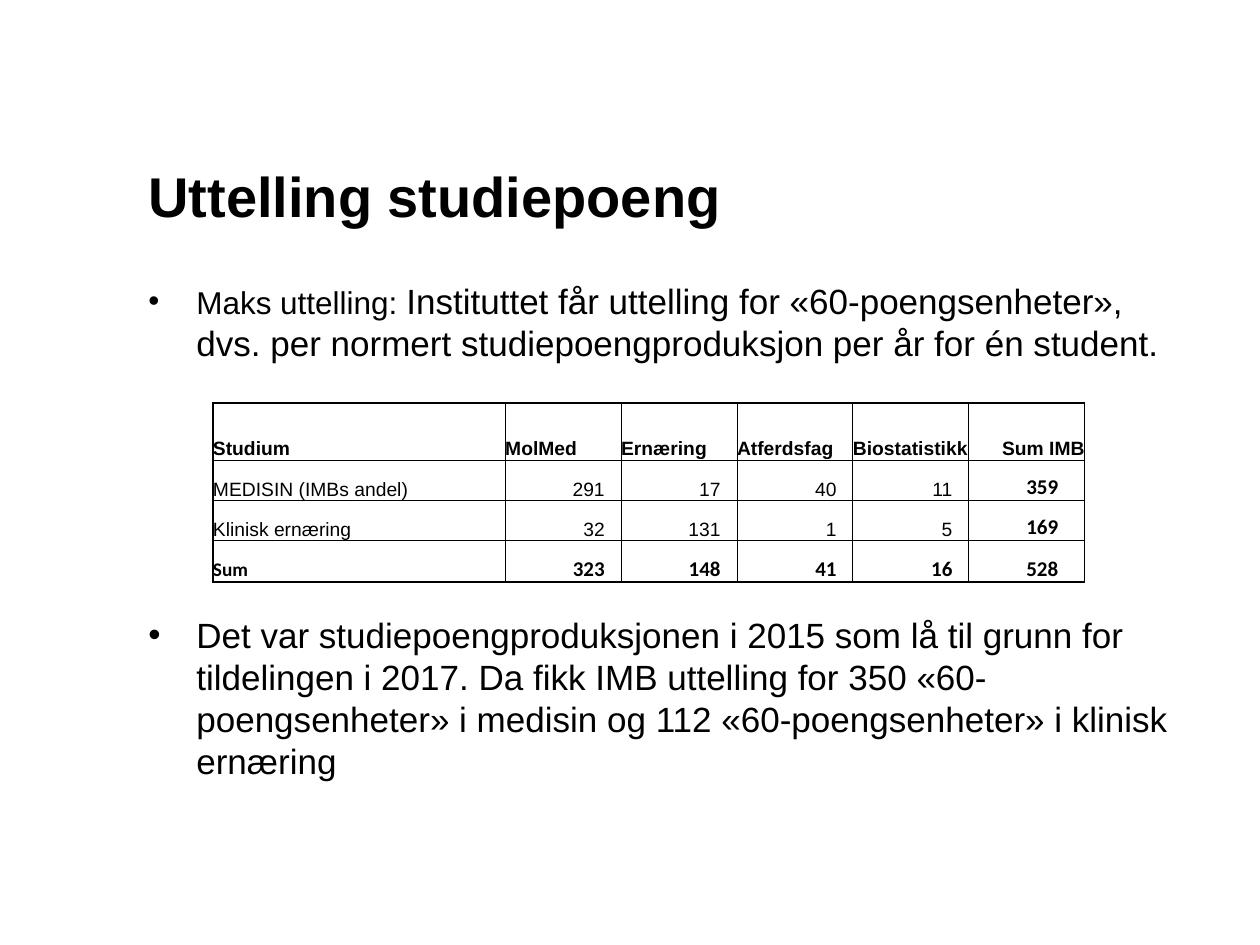
from dataclasses import dataclass

from lxml import etree
from pptx import Presentation
from pptx import util as u
from pptx.dml.color import RGBColor
from pptx.enum import text
from pptx.oxml.ns import qn


@dataclass(frozen=True)
class Theme:
    ink: RGBColor = RGBColor(0, 0, 0)
    font: str = "Arial"
    total_font: str = "Calibri"
    title: int = 32
    body: int = 20
    lead: int = 18
    table: int = 11
    total: int = 12
    thin: float = 0.5
    thick: float = 1


@dataclass(frozen=True)
class Bullet:
    spans: tuple[tuple[str, int], ...]
    space_before: float


THEME = Theme()
BULLETS = (
    Bullet((("Maks uttelling: ", THEME.lead),
            ("Instituttet får uttelling for «60-poengsenheter», dvs. per normert "
             "studiepoengproduksjon per år for én student.", THEME.body)), 0),
    Bullet((("Det var studiepoengproduksjonen i 2015 som lå til grunn for tildelingen i 2017. "
             "Da fikk IMB uttelling for 350 «60-poengsenheter» i medisin og 112 "
             "«60-poengsenheter» i klinisk ernæring", THEME.body),), 143),
)
ROWS = (
    ("Studium", "MolMed", "Ernæring", "Atferdsfag", "Biostatistikk", "Sum IMB"),
    ("MEDISIN (IMBs andel)", "291", "17", "40", "11", "359"),
    ("Klinisk ernæring", "32", "131", "1", "5", "169"),
    ("Sum", "323", "148", "41", "16", "528"),
)
COLUMN_WIDTHS = (2.32,) + (0.92,) * 5
ROW_HEIGHTS = (0.45, 0.32, 0.32, 0.33)
NUMBER_INSET, TOTAL_INSET = 0.13, 0.21


def style(span, size: float, bold: bool = False, font: str = THEME.font) -> None:
    span.font.name, span.font.size, span.font.bold = font, u.Pt(size), bold
    span.font.color.rgb = THEME.ink


def add_box(page, left: float, top: float, width: float, height: float):
    frame = page.shapes.add_textbox(*map(u.Inches, (left, top, width, height))).text_frame
    frame.word_wrap = True
    return frame


def add_title(page, words: str) -> None:
    frame = add_box(page, 1.08, 0.92, 8.42, 1.25)
    frame.vertical_anchor = text.MSO_ANCHOR.MIDDLE
    frame.text = words
    style(frame.paragraphs[0].runs[0], THEME.title, True)


def add_bullets(page, bullets: tuple[Bullet, ...]) -> None:
    frame = add_box(page, 1.08, 2.17, 8.42, 4.5)
    for index, bullet in enumerate(bullets):
        para = frame.add_paragraph() if index else frame.paragraphs[0]
        properties = para._p.get_or_add_pPr()
        properties.set("marL", str(u.Inches(0.38)))
        properties.set("indent", str(u.Inches(-0.38)))
        etree.SubElement(properties, qn("a:buFont"), typeface=THEME.font)
        etree.SubElement(properties, qn("a:buChar"), char="•")
        para.space_before = u.Pt(bullet.space_before)
        for words, size in bullet.spans:
            span = para.add_run()
            span.text = words
            style(span, size)


def set_borders(cell, widths: dict[str, float]) -> None:
    properties = cell._tc.get_or_add_tcPr()
    for index, (side, width) in enumerate(widths.items()):
        line = etree.Element(qn(f"a:ln{side}"), w=str(u.Pt(width)))
        fill = etree.SubElement(line, qn("a:solidFill"))
        etree.SubElement(fill, qn("a:srgbClr"), val=str(THEME.ink))
        properties.insert(index, line)


def fill_cell(cell, words: str, row: int, column: int) -> None:
    last_row, last_column = len(ROWS) - 1, len(COLUMN_WIDTHS) - 1
    is_number = row > 0 and column > 0
    is_total = row == last_row or (row > 0 and column == last_column)
    cell.fill.background()
    cell.vertical_anchor = text.MSO_ANCHOR.BOTTOM
    cell.margin_left = cell.margin_right = cell.margin_top = cell.margin_bottom = 0
    cell.text = words
    para = cell.text_frame.paragraphs[0]
    if is_number or column == last_column:
        para.alignment = text.PP_ALIGN.RIGHT
    if is_number:
        cell.margin_right = u.Inches(TOTAL_INSET if column == last_column else NUMBER_INSET)
    style(para.runs[0], THEME.total if is_total and is_number else THEME.table,
          row == 0 or is_total, THEME.total_font if is_total else THEME.font)
    outer = {"L": column == 0, "R": column == last_column, "T": row == 0, "B": row == last_row}
    set_borders(cell, {side: THEME.thick if edge else THEME.thin for side, edge in outer.items()})


def add_credit_table(page) -> None:
    table = page.shapes.add_table(
        len(ROWS), len(COLUMN_WIDTHS), u.Inches(1.69), u.Inches(3.2),
        u.Inches(sum(COLUMN_WIDTHS)), u.Inches(sum(ROW_HEIGHTS))).table
    table.first_row = table.horz_banding = False
    for column, width in zip(table.columns, COLUMN_WIDTHS):
        column.width = u.Inches(width)
    for row, height in zip(table.rows, ROW_HEIGHTS):
        row.height = u.Inches(height)
    for row, values in enumerate(ROWS):
        for column, words in enumerate(values):
            fill_cell(table.cell(row, column), words, row, column)


def main() -> None:
    """Build the slide on study credit funding."""
    deck = Presentation()
    deck.slide_width, deck.slide_height = u.Inches(10), u.Inches(7.5)
    page = deck.slides.add_slide(deck.slide_layouts[6])
    add_title(page, "Uttelling studiepoeng")
    add_bullets(page, BULLETS)
    add_credit_table(page)
    deck.save("out.pptx")


if __name__ == "__main__":
    main()
